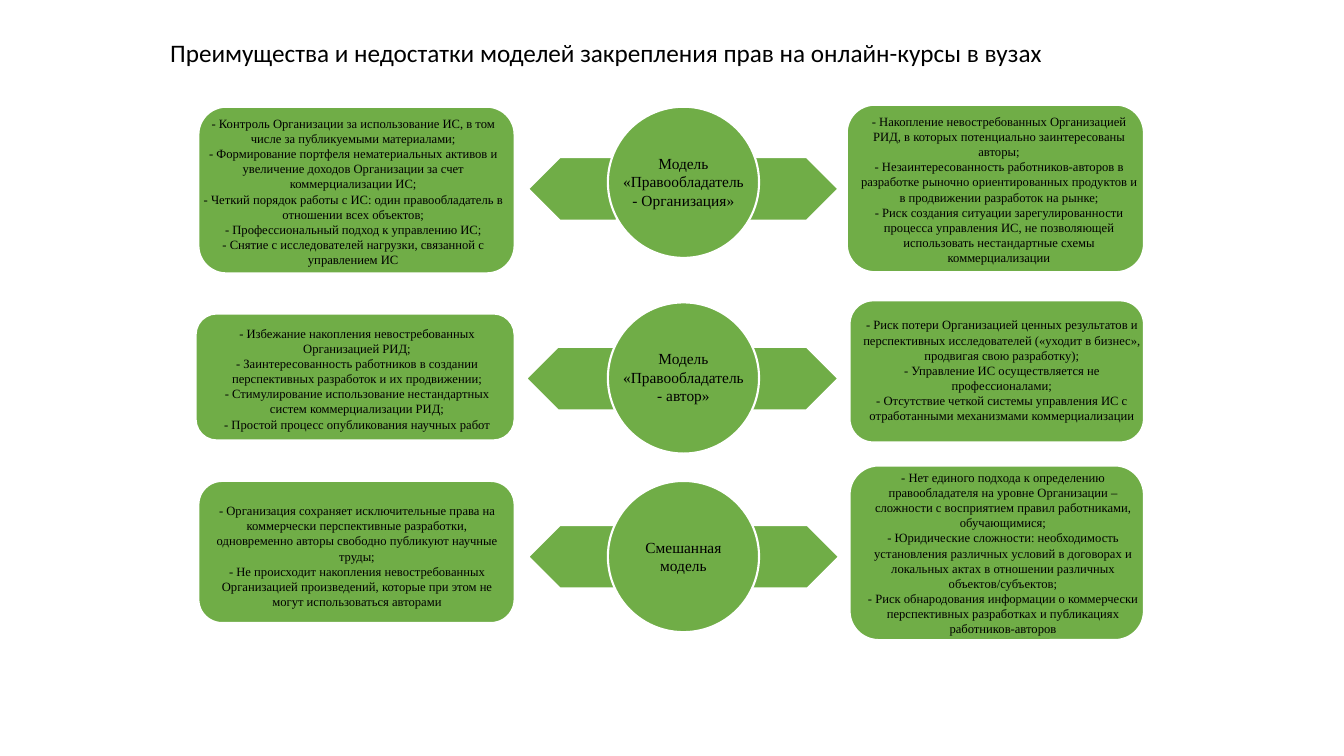
from dataclasses import dataclass

from pptx import Presentation
from pptx.dml.color import RGBColor
from pptx.enum.shapes import MSO_SHAPE as Shape
from pptx.enum.text import MSO_AUTO_SIZE as AutoSize, PP_ALIGN as Align
from pptx.util import Cm, Pt


@dataclass(frozen=True)
class Theme:
    fill: RGBColor = RGBColor(0x70, 0xAD, 0x47)
    outline: RGBColor = RGBColor(0xFF, 0xFF, 0xFF)
    ink: RGBColor = RGBColor(0, 0, 0)
    outline_width: Pt = Pt(1.5)
    title_size: Pt = Pt(18)
    model_size: Pt = Pt(11)
    list_size: Pt = Pt(9)
    title_font: str = "Calibri"
    body_font: str = "Times New Roman"


class SlideBuilder:
    def __init__(self, slide, theme):
        self.slide = slide
        self.theme = theme

    def block(self, kind, box, flipped=False):
        """Add a filled, outlined preset shape; box is left, top, width, height in cm."""
        shape = self.slide.shapes.add_shape(kind, *map(Cm, box))
        shape.shadow.inherit = False
        shape.fill.solid()
        shape.fill.fore_color.rgb = self.theme.fill
        shape.line.color.rgb = self.theme.outline
        shape.line.width = self.theme.outline_width
        if flipped:
            shape.element.spPr.get_or_add_xfrm().set("flipH", "1")

    def text(self, box, lines, size, font=None, align=Align.CENTER, wrap=True):
        frame = self.slide.shapes.add_textbox(*map(Cm, box)).text_frame
        frame.word_wrap = wrap
        frame.auto_size = AutoSize.SHAPE_TO_FIT_TEXT
        frame.text = "\n".join(lines)
        font_format = {"name": font or self.theme.body_font, "size": size}
        for paragraph in frame.paragraphs:
            paragraph.alignment = align
            for run in paragraph.runs:
                for attribute, value in font_format.items():
                    setattr(run.font, attribute, value)
                run.font.color.rgb = self.theme.ink

    def card(self, box, text_box, points):
        """Add a rounded panel with a dashed list over it."""
        self.block(Shape.ROUNDED_RECTANGLE, box)
        self.text(text_box, [f"- {point}" for point in points], self.theme.list_size)

    def arrow(self, left, top, width, flipped=False):
        self.block(Shape.PENTAGON, (left, top, width, ARROW_HEIGHT), flipped)

    def model(self, top, name, caption_height):
        """Add a circle with its caption centred on it."""
        self.block(Shape.OVAL, (CIRCLE_LEFT, top, CIRCLE_SIZE, CIRCLE_SIZE))
        caption_left = CIRCLE_LEFT + (CIRCLE_SIZE - CAPTION_WIDTH) / 2
        caption_top = top + (CIRCLE_SIZE - caption_height) / 2
        self.text((caption_left, caption_top, CAPTION_WIDTH, caption_height),
                  [name], self.theme.model_size)


ARROW_HEIGHT = 1.6
LEFT_ARROW_WIDTH, RIGHT_ARROW_WIDTH = 2.24, 2.38
CIRCLE_LEFT, CIRCLE_SIZE = 15.32, 3.81
CAPTION_WIDTH = 3.58

TITLE = "Преимущества и недостатки моделей закрепления прав на онлайн-курсы в вузах"

MODELS = [
    {
        "name": "Модель «Правообладатель- Организация»",
        "circle_top": 2.69, "caption_height": 1.68,
        "arrow_top": 3.96, "arrow_lefts": (13.31, 18.75),
        "advantages": ((5, 2.69, 7.97, 4.2), (4.85, 2.79, 8.1, 4.11), [
            "Контроль Организации за использование ИС, в том числе за публикуемыми материалами;",
            "Формирование портфеля нематериальных активов и увеличение доходов Организации "
            "за счет коммерциализации ИС;",
            "Четкий порядок работы с ИС: один правообладатель в отношении всех объектов;",
            "Профессиональный подход к управлению ИС;",
            "Снятие с исследователей нагрузки, связанной с управлением ИС",
        ]),
        "drawbacks": ((21.34, 2.64, 7.49, 4.22), (21.34, 2.74, 7.67, 4.11), [
            "Накопление невостребованных Организацией РИД, в которых потенциально "
            "заинтересованы авторы;",
            "Незаинтересованность работников-авторов в разработке рыночно ориентированных "
            "продуктов и в продвижении разработок на рынке;",
            "Риск создания ситуации зарегулированности процесса управления ИС, не позволяющей "
            "использовать нестандартные схемы коммерциализации",
        ]),
    },
    {
        "name": "Модель «Правообладатель- автор»",
        "circle_top": 7.62, "caption_height": 1.68,
        "arrow_top": 8.74, "arrow_lefts": (13.26, 18.75),
        "advantages": ((4.93, 7.9, 8.04, 3.2), (5.16, 8.08, 7.67, 2.95), [
            "Избежание накопления невостребованных Организацией РИД;",
            "Заинтересованность работников в создании перспективных разработок и их продвижении;",
            "Стимулирование использование нестандартных систем коммерциализации РИД;",
            "Простой процесс опубликования научных работ",
        ]),
        "drawbacks": ((21.41, 7.57, 7.42, 3.58), (21.41, 7.87, 7.67, 2.95), [
            "Риск потери Организацией ценных результатов и перспективных исследователей "
            "(«уходит в бизнес», продвигая свою разработку);",
            "Управление ИС осуществляется не профессионалами;",
            "Отсутствие четкой системы управления ИС с отработанными механизмами "
            "коммерциализации",
        ]),
    },
    {
        "name": "Смешанная модель",
        "circle_top": 12.12, "caption_height": 1.19,
        "arrow_top": 13.23, "arrow_lefts": (13.31, 18.77),
        "advantages": ((5, 12.12, 7.97, 3.58), (5.16, 12.55, 7.67, 2.95), [
            "Организация сохраняет исключительные права на коммерчески перспективные "
            "разработки, одновременно авторы свободно публикуют научные труды;",
            "Не происходит накопления невостребованных Организацией произведений, которые "
            "при этом не могут использоваться авторами",
        ]),
        "drawbacks": ((21.41, 11.73, 7.42, 4.4), (21.44, 11.71, 7.67, 4.5), [
            "Нет единого подхода к определению правообладателя на уровне Организации – "
            "сложности с восприятием правил работниками, обучающимися;",
            "Юридические сложности: необходимость установления различных условий в договорах "
            "и локальных актах в отношении различных объектов/субъектов;",
            "Риск обнародования информации о коммерчески перспективных разработках и "
            "публикациях работников-авторов",
        ]),
    },
]


def main():
    presentation = Presentation()
    presentation.slide_width, presentation.slide_height = Cm(33.87), Cm(19.05)
    theme = Theme()
    builder = SlideBuilder(presentation.slides.add_slide(presentation.slide_layouts[6]), theme)

    builder.text((4.04, 0.81, 22.73, 1.02), [TITLE], theme.title_size,
                 font=theme.title_font, align=Align.LEFT, wrap=False)
    for model in MODELS:
        builder.card(*model["advantages"])
        builder.card(*model["drawbacks"])
        left_arrow, right_arrow = model["arrow_lefts"]
        builder.arrow(left_arrow, model["arrow_top"], LEFT_ARROW_WIDTH, flipped=True)
        builder.arrow(right_arrow, model["arrow_top"], RIGHT_ARROW_WIDTH)
        builder.model(model["circle_top"], model["name"], model["caption_height"])

    presentation.save("out.pptx")


if __name__ == "__main__":
    main()
